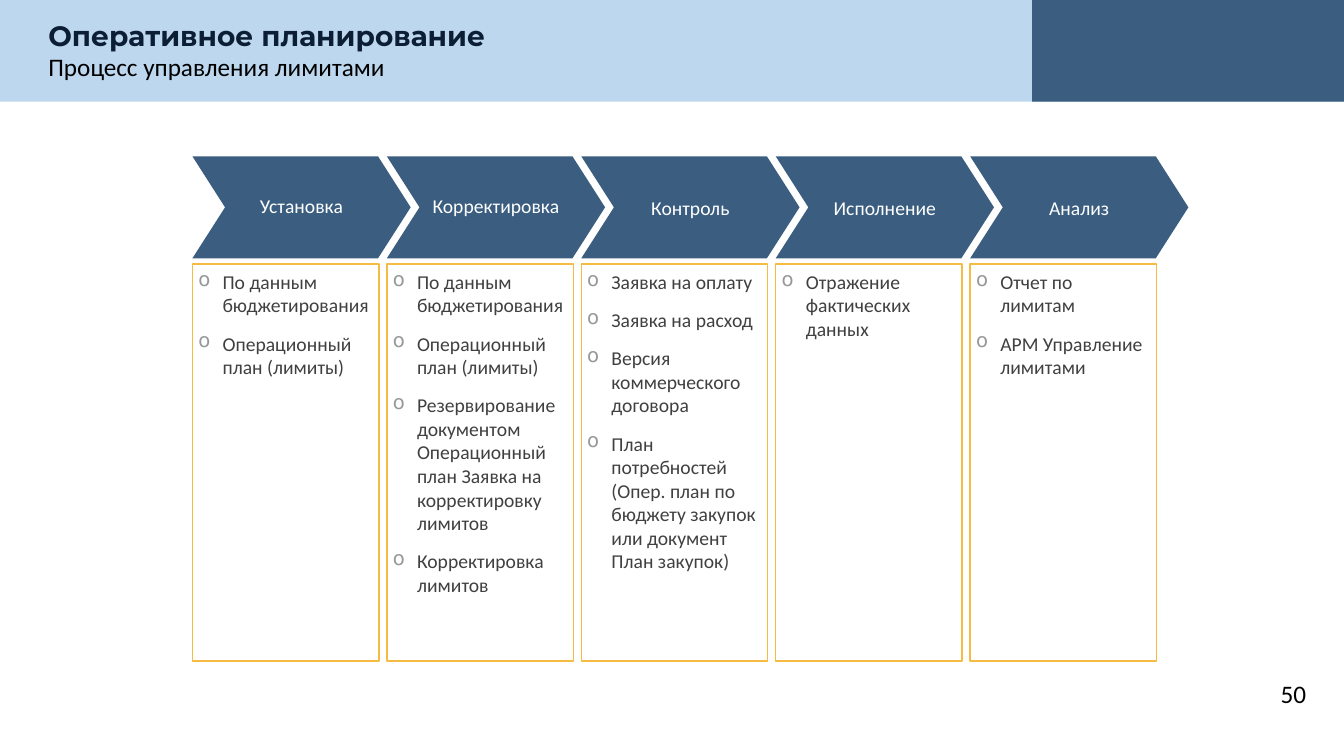
import pptx
import pptx.util
import pptx.dml.color
import pptx.enum.shapes
import pptx.enum.text
import pptx.oxml
import pptx.oxml.ns

Cm = pptx.util.Cm
Pt = pptx.util.Pt
SHAPE = pptx.enum.shapes.MSO_SHAPE
ALIGN = pptx.enum.text.PP_ALIGN
ANCHOR = pptx.enum.text.MSO_ANCHOR

TITLE = "Оперативное планирование"
SUBTITLE = "Процесс управления лимитами"
PAGE = "50"
STAGES = [
    ("Установка", 0.9, [
        "По данным бюджетирования",
        "Операционный план (лимиты)",
    ]),
    ("Корректировка", 0.9, [
        "По данным бюджетирования",
        "Операционный план (лимиты)",
        "Резервирование документом Операционный план Заявка на корректировку лимитов",
        "Корректировка лимитов",
    ]),
    ("Контроль", 1.0, [
        "Заявка на оплату",
        "Заявка на расход",
        "Версия коммерческого договора",
        "План потребностей (Опер. план по бюджету закупок или документ План закупок)",
    ]),
    ("Исполнение", 1.0, ["Отражение фактических данных"]),
    ("Анализ", 1.0, ["Отчет по лимитам", "АРМ Управление лимитами"]),
]

THEME = {
    "band": "BDD7EE", "accent": "3A5D80", "frame": "F6BB42",
    "title": "0C1E34", "text": "000000", "detail": "404040",
    "bullet": "97989A", "light": "FFFFFF",
    "title_font": "Montserrat", "font": "Calibri",
    "title_size": 20, "subtitle_size": 18, "body_size": 14,
}

SLIDE_W, SLIDE_H = 33.87, 19.05
HEADER_TOP, HEADER_H, CORNER_LEFT = -0.03, 2.59, 26.01
STAGE_LEFT, STAGE_PITCH = 4.85, 4.9
ARROW_TOP, ARROW_W, ARROW_H = 3.94, 5.5, 2.57
FRAME_TOP, FRAME_W, FRAME_H = 6.65, 4.7, 10.01
INSET, INDENT = 0.15, 0.61


def color(name):
    return pptx.dml.color.RGBColor.from_string(THEME[name])


def add_block(slide, kind, left, top, width, height, fill=None, line=None):
    block = slide.shapes.add_shape(kind, Cm(left), Cm(top), Cm(width), Cm(height))
    block.shadow.inherit = False
    if fill:
        block.fill.solid()
        block.fill.fore_color.rgb = color(fill)
    else:
        block.fill.background()
    if line:
        block.line.color.rgb = color(line)
        block.line.width = Pt(1)
    else:
        block.line.fill.background()
    return block


def set_frame(block, anchor, side_inset):
    frame = block.text_frame
    frame.word_wrap = True
    frame.vertical_anchor = anchor
    frame.margin_left = frame.margin_right = Cm(side_inset)
    frame.margin_top = frame.margin_bottom = Cm(INSET)
    return frame


def add_text(paragraph, text, size, ink, font="font", bold=False):
    run = paragraph.add_run()
    run.text = text
    run.font.name = THEME[font]
    run.font.size = Pt(THEME[size])
    run.font.bold = bold
    run.font.color.rgb = color(ink)


def add_bullet(paragraph):
    properties = paragraph._p.get_or_add_pPr()
    properties.set("marL", str(Cm(INDENT)))
    properties.set("indent", str(-Cm(INDENT)))
    namespace = pptx.oxml.ns.nsdecls("a")
    for markup in (
        f'<a:buClr {namespace}><a:srgbClr val="{THEME["bullet"]}"/></a:buClr>',
        f'<a:buChar {namespace} char="o"/>',
    ):
        properties.append(pptx.oxml.parse_xml(markup))


def add_header(slide):
    add_block(slide, SHAPE.RECTANGLE, 0, HEADER_TOP, SLIDE_W, HEADER_H, "band")
    add_block(slide, SHAPE.RECTANGLE, CORNER_LEFT, HEADER_TOP,
              SLIDE_W - CORNER_LEFT, HEADER_H, "accent")
    heading = slide.shapes.add_textbox(Cm(0.97), Cm(0.33), Cm(16.94), Cm(1.88)).text_frame
    heading.word_wrap = True
    heading.auto_size = pptx.enum.text.MSO_AUTO_SIZE.SHAPE_TO_FIT_TEXT
    paragraph = heading.paragraphs[0]
    add_text(paragraph, TITLE, "title_size", "title", "title_font", True)
    paragraph.add_line_break()
    add_text(paragraph, SUBTITLE, "subtitle_size", "text")


def add_page_number(slide):
    number = slide.shapes.add_textbox(Cm(25.55), Cm(16.97), Cm(7.62), Cm(1.02)).text_frame
    number.word_wrap = True
    number.paragraphs[0].alignment = ALIGN.RIGHT
    add_text(number.paragraphs[0], PAGE, "subtitle_size", "text")


def add_stage(slide, left, name, spacing, details):
    arrow = add_block(slide, SHAPE.CHEVRON, left, ARROW_TOP, ARROW_W, ARROW_H, "accent")
    arrow.adjustments[0] = 0.32
    label = set_frame(arrow, ANCHOR.MIDDLE, 0).paragraphs[0]
    label.alignment = ALIGN.CENTER
    label.line_spacing = spacing
    add_text(label, name, "body_size", "light")

    box = add_block(slide, SHAPE.RECTANGLE, left, FRAME_TOP, FRAME_W, FRAME_H, line="frame")
    frame = set_frame(box, ANCHOR.TOP, INSET)
    for index, detail in enumerate(details):
        paragraph = frame.add_paragraph() if index else frame.paragraphs[0]
        add_bullet(paragraph)
        paragraph.level = 2
        paragraph.alignment = ALIGN.LEFT
        paragraph.space_before = Pt(6.5 if index else 0)
        paragraph.space_after = Pt(4)
        add_text(paragraph, detail, "body_size", "detail")


def main():
    deck = pptx.Presentation()
    deck.slide_width, deck.slide_height = Cm(SLIDE_W), Cm(SLIDE_H)
    slide = deck.slides.add_slide(deck.slide_layouts[6])
    add_header(slide)
    add_page_number(slide)
    for index, stage in enumerate(STAGES):
        add_stage(slide, STAGE_LEFT + index * STAGE_PITCH, *stage)
    deck.save("out.pptx")


if __name__ == "__main__":
    main()
